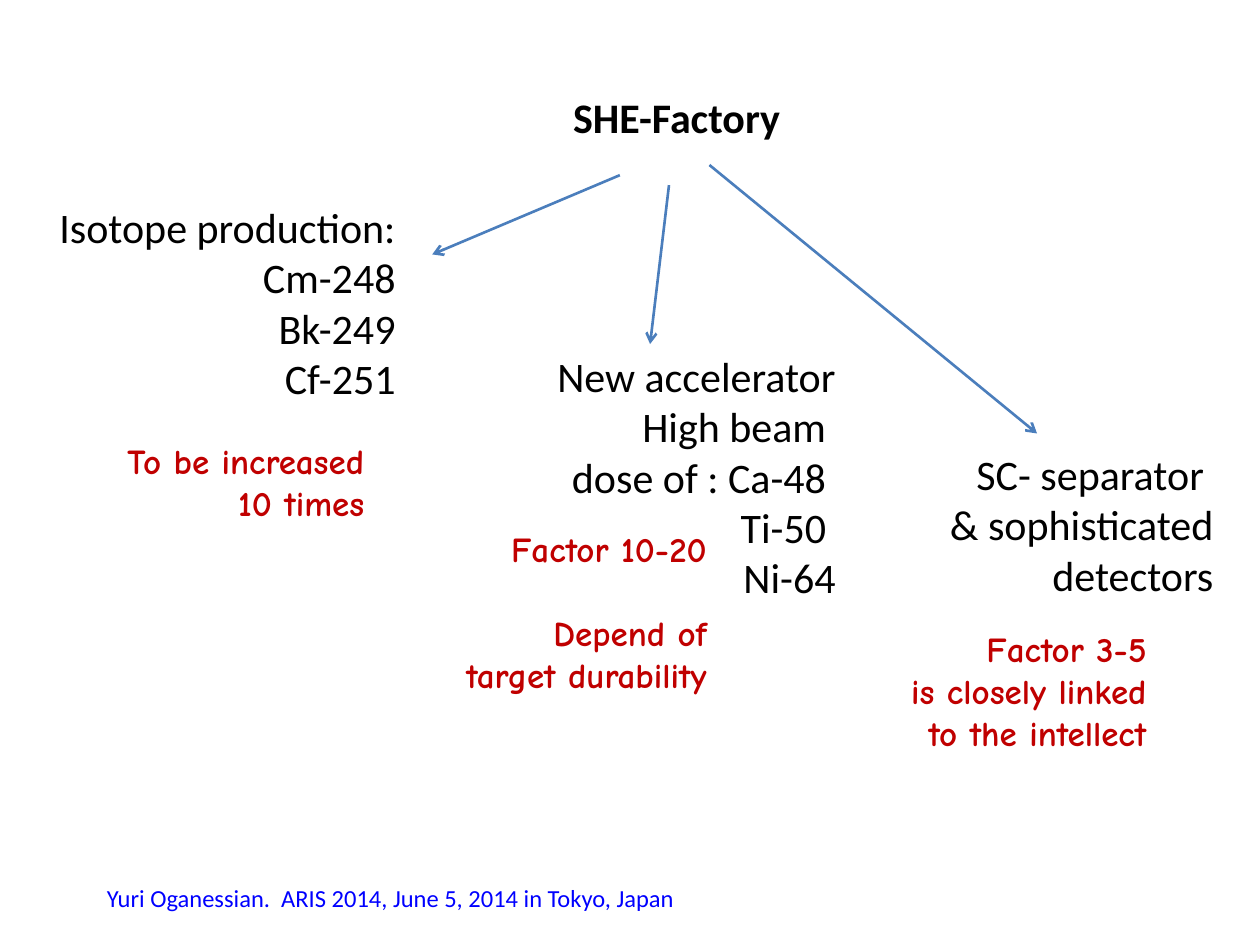
from dataclasses import dataclass

from lxml.etree import SubElement
from pptx import Presentation
from pptx.dml.color import RGBColor
from pptx.enum.shapes import MSO_CONNECTOR
from pptx.enum.text import MSO_AUTO_SIZE, PP_ALIGN
from pptx.oxml.ns import qn
from pptx.util import Pt


@dataclass(frozen=True)
class Theme:
    """Colours, fonts and type sizes of the slide."""
    ink: str = "000000"
    note: str = "C00000"
    arrow: str = "4B7EBC"
    credit: str = "0000FF"
    body_font: str = "Calibri"
    note_font: str = "Comic Neue"
    body_size: int = 24
    note_size: int = 20
    credit_size: int = 14
    arrow_width: float = 1.5


THEME = Theme()


def add_text(slide, box, lines, *, size=THEME.body_size, font=THEME.body_font,
             color=THEME.ink, bold=False, align=PP_ALIGN.LEFT, gaps=None):
    """Place lines in a box; gaps maps a line index to the space before it."""
    frame = slide.shapes.add_textbox(*map(Pt, box)).text_frame
    frame.word_wrap = False
    frame.auto_size = MSO_AUTO_SIZE.SHAPE_TO_FIT_TEXT
    for index, line in enumerate(lines):
        paragraph = frame.add_paragraph() if index else frame.paragraphs[0]
        paragraph.alignment = align
        if gaps and index in gaps:
            paragraph.space_before = Pt(gaps[index])
        run = paragraph.add_run()
        run.text = line
        run.font.size = Pt(size)
        run.font.name = font
        run.font.bold = bold
        run.font.color.rgb = RGBColor.from_string(color)


def add_arrow(slide, start, end):
    """Draw a straight open-headed arrow between two points."""
    arrow = slide.shapes.add_connector(
        MSO_CONNECTOR.STRAIGHT, *map(Pt, (*start, *end)))
    arrow.line.width = Pt(THEME.arrow_width)
    arrow.line.color.rgb = RGBColor.from_string(THEME.arrow)
    SubElement(arrow.line._get_or_add_ln(), qn("a:tailEnd"), type="arrow")
    SubElement(arrow._element.spPr, qn("a:effectLst"))


def add_title(slide, box):
    """Place the root of the diagram."""
    add_text(slide, box, ["SHE-Factory"], bold=True)


def add_branch(slide, box, topic, note, note_box, arrow_start, arrow_tip, gaps=None):
    """Place a topic, with its note and arrow tip offset from the topic's box."""
    left, top = box[:2]
    note_left, note_top, note_width, note_height = note_box
    add_text(slide, box, topic, align=PP_ALIGN.RIGHT)
    add_arrow(slide, arrow_start, (left + arrow_tip[0], top + arrow_tip[1]))
    add_text(slide, (left + note_left, top + note_top, note_width, note_height),
             note, size=THEME.note_size, font=THEME.note_font, color=THEME.note,
             bold=True, align=PP_ALIGN.RIGHT, gaps=gaps)


def add_credit(slide, box):
    """Place the speaker and the event."""
    add_text(slide, box, ["Yuri Oganessian.  ARIS 2014, June 5, 2014 in Tokyo, Japan"],
             size=THEME.credit_size, color=THEME.credit)


def main():
    """Build and save the slide."""
    deck = Presentation()
    deck.slide_width, deck.slide_height = Pt(720), Pt(540)
    slide = deck.slides.add_slide(deck.slide_layouts[6])
    add_title(slide, (320.4, 49, 134.6, 36))
    add_branch(slide, (19.4, 111.6, 213.8, 123.8),
               ["Isotope production:", "Cm-248", "Bk-249", "Cf-251"],
               ["To be increased", "10 times"],
               note_box=(24.5, 136.1, 171.4, 55.4),
               arrow_start=(354.2, 100.1), arrow_tip=(227.6, 33.8))
    add_branch(slide, (309.6, 196.6, 175, 152.6),
               ["New accelerator", "High beam ", "dose of : Ca-48 ", "Ti-50 ", "Ni-64"],
               ["Factor 10-20", "Depend of", "target durability"],
               note_box=(-76.3, 101.5, 177.8, 104.4),
               arrow_start=(382.3, 105.8), arrow_tip=(61.9, 0), gaps={1: 24})
    add_branch(slide, (533.5, 252.7, 167, 94.3),
               ["SC- separator ", "& sophisticated", "detectors"],
               ["Factor 3-5", "is closely linked", "to the intellect"],
               note_box=(-38.9, 102.3, 167.8, 79.9),
               arrow_start=(405.4, 94.3), arrow_tip=(59.1, -5))
    add_credit(slide, (54, 501.1, 342, 24.5))
    deck.save("out.pptx")


if __name__ == "__main__":
    main()
